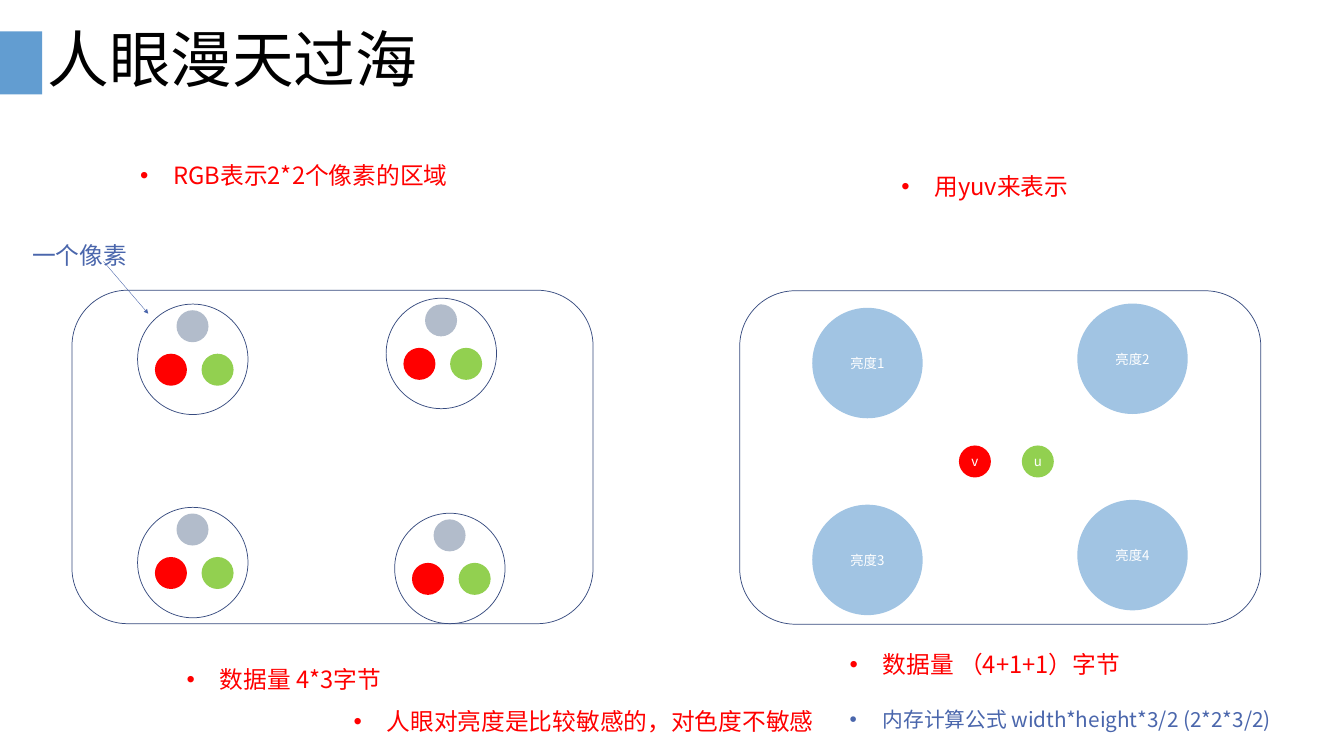
from dataclasses import dataclass

from lxml import etree
from pptx import Presentation
from pptx.dml.color import RGBColor
from pptx.enum.shapes import MSO_CONNECTOR, MSO_SHAPE
from pptx.enum.text import MSO_ANCHOR, MSO_AUTO_SIZE, PP_ALIGN
from pptx.oxml.ns import qn
from pptx.util import Inches, Pt

RECT, ROUND, OVAL = MSO_SHAPE.RECTANGLE, MSO_SHAPE.ROUNDED_RECTANGLE, MSO_SHAPE.OVAL
LEFT, CENTER = PP_ALIGN.LEFT, PP_ALIGN.CENTER
TOP, MIDDLE = MSO_ANCHOR.TOP, MSO_ANCHOR.MIDDLE
FIXED, GROW = MSO_AUTO_SIZE.NONE, MSO_AUTO_SIZE.SHAPE_TO_FIT_TEXT
STRAIGHT = MSO_CONNECTOR.STRAIGHT

# The slide is a grid of square cells, ten to the inch
COLS, ROWS = 252, 141.7


@dataclass(frozen=True)
class Theme:
    bar: str = "629DD1"
    ink: str = "000000"
    white: str = "FFFFFF"
    edge: str = "374B7F"
    note: str = "4A66AC"
    red: str = "FF0000"
    green: str = "92D050"
    grey: str = "B2BCCB"
    luma: str = "A1C4E3"
    head: float = 83.2
    body: int = 32
    small: int = 28
    label: int = 18
    face: str = "Noto Sans CJK SC"
    title: str = "Calibri"


T = Theme()
DOT, PIXEL = 6, 20.7


def cell(n):
    return Inches(n / 10)


def spot(box, x, y, w, h):
    """Place a part relative to the top left corner of a box."""
    return box[0] + x, box[1] + y, w, h


def write(frame, text, size=T.body, color=T.red, face=T.face, align=LEFT,
          anchor=TOP, lines=None, bullet=False, inset=None, fit=FIXED):
    frame.word_wrap = True
    frame.auto_size = fit
    frame.vertical_anchor = anchor
    if inset is not None:
        frame.margin_left = frame.margin_right = cell(inset)
        frame.margin_top = frame.margin_bottom = cell(inset)
    para = frame.paragraphs[0]
    para.alignment = align
    if lines:
        para.line_spacing = lines
    run = para.add_run()
    run.text = text
    run.font.size = Pt(size)
    run.font.name = face
    run.font.color.rgb = RGBColor.from_string(color)
    props = run.font._element
    etree.SubElement(props, qn("a:ea")).set("typeface", T.face)
    if bullet:
        props = para._p.get_or_add_pPr()
        props.set("marL", str(cell(6.2)))
        props.set("indent", str(-cell(6.2)))
        etree.SubElement(props, qn("a:buFont")).set("typeface", "Arial")
        etree.SubElement(props, qn("a:buChar")).set("char", "•")


def draw(slide, kind, box, fill=None, line=None, text=None):
    shape = slide.shapes.add_shape(kind, *map(cell, box))
    shape.shadow.inherit = False
    if fill:
        shape.fill.solid()
        shape.fill.fore_color.rgb = RGBColor.from_string(fill)
    else:
        shape.fill.background()
    if line:
        shape.line.color.rgb = RGBColor.from_string(line)
        shape.line.width = Pt(1)
    else:
        shape.line.fill.background()
    if text:
        write(shape.text_frame, text, size=T.label, color=T.white,
              align=CENTER, anchor=MIDDLE, inset=0)


def say(slide, text, box, bullet=True, **fmt):
    frame = slide.shapes.add_textbox(*map(cell, box)).text_frame
    write(frame, text, lines=1.5, bullet=bullet, inset=0.5, fit=GROW, **fmt)


def header(slide, box):
    draw(slide, RECT, spot(box, 0, 0.2, 7.9, 11.8), fill=T.bar)
    title = slide.shapes.title
    title.left, title.top, title.width, title.height = map(
        cell, spot(box, 7.9, 0, 236.2, 12))
    write(title.text_frame, "人眼漫天过海", size=T.head, color=T.ink,
          face=T.title, anchor=MIDDLE, lines=0.9)


def pixel(slide, box):
    draw(slide, OVAL, box, line=T.edge)
    for x, y, color in ((7.3, 1.15, T.grey), (3.25, 9.3, T.red),
                        (12, 9.3, T.green)):
        draw(slide, OVAL, spot(box, x, y, DOT, DOT), fill=color)


def rgb_panel(slide, box):
    say(slide, "RGB表示2*2个像素的区域", spot(box, 12.3, -27.4, 193.7, 8.2))
    for x, y in ((12.3, 2.6), (58.9, 1.5), (12.3, 40.7), (60.5, 41.8)):
        pixel(slide, spot(box, x, y, PIXEL, PIXEL))
    draw(slide, ROUND, box, line=T.edge)
    # Callout to the first pixel
    say(slide, "一个像素", spot(box, -8, -12.4, 30.2, 8.2),
        bullet=False, color=T.note)
    arrow(slide, spot(box, 5.9, -5.4, 8.4, 9.8))
    say(slide, "数据量 4*3字节", spot(box, 21, 67, 77.7, 8.2))


def arrow(slide, box):
    x, y, w, h = box
    link = slide.shapes.add_connector(
        STRAIGHT, cell(x), cell(y), cell(x + w), cell(y + h))
    link.line.color.rgb = RGBColor.from_string(T.note)
    link.line.width = Pt(0.5)
    tail = etree.SubElement(link.line._get_or_add_ln(), qn("a:tailEnd"))
    tail.set("type", "triangle")
    etree.SubElement(link._element.spPr, qn("a:effectLst"))


def yuv_panel(slide, box):
    say(slide, "用yuv来表示", spot(box, 29.8, -25.4, 46, 8.2))
    draw(slide, ROUND, box, line=T.edge)
    # One brightness value for each pixel
    places = (13.6, 3.2), (63.3, 2.4), (13.6, 40.1), (63.3, 39.2)
    for i, (x, y) in enumerate(places, 1):
        draw(slide, OVAL, spot(box, x, y, PIXEL, PIXEL),
             fill=T.luma, text=f"亮度{i}")
    # Shared colour values
    for name, x, color in (("v", 41.1, T.red), ("u", 52.9, T.green)):
        draw(slide, OVAL, spot(box, x, 29, DOT, DOT), fill=color, text=name)
    say(slide, "数据量 （4+1+1）字节", spot(box, 20.1, 64.1, 77.7, 8.2))
    say(slide, "内存计算公式 width*height*3/2 (2*2*3/2)",
        spot(box, 20.1, 75.1, 105.7, 7.3), size=T.small, color=T.note)


def main():
    deck = Presentation()
    deck.slide_width, deck.slide_height = cell(COLS), cell(ROWS)
    slide = deck.slides.add_slide(deck.slide_layouts.get_by_name("Title Only"))
    header(slide, (0, 5.7, COLS, 12))
    rgb_panel(slide, (13.5, 54.4, 97.7, 62.5))
    yuv_panel(slide, (138.7, 54.5, 97.7, 62.5))
    # Conclusion
    say(slide, "人眼对亮度是比较敏感的，对色度不敏感", (65.8, 129.3, 193.7, 8.2))
    deck.save("out.pptx")


if __name__ == "__main__":
    main()
